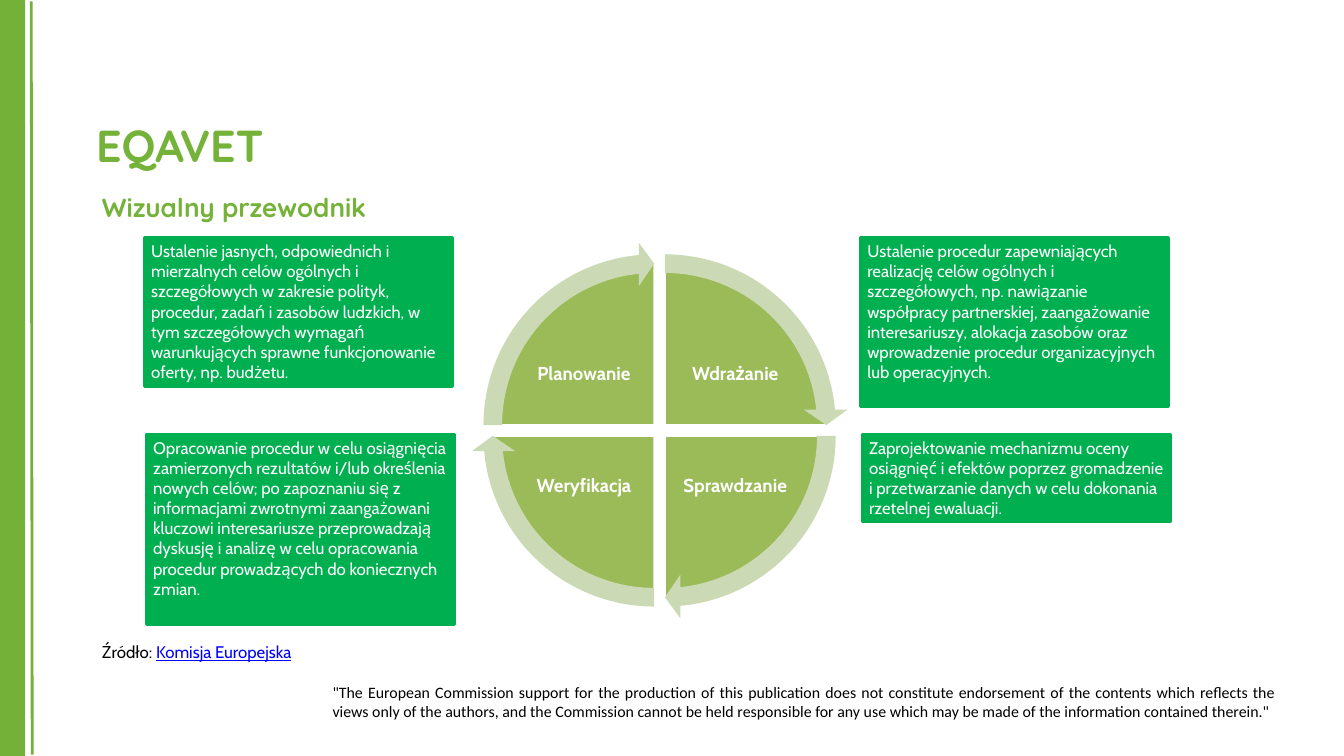
from typing import NamedTuple

from lxml.etree import SubElement
from pptx import Presentation
from pptx.dml.color import RGBColor as Rgb
from pptx.enum.shapes import MSO_CONNECTOR as Link, MSO_SHAPE as Form
from pptx.enum.text import MSO_ANCHOR as Anchor, PP_ALIGN as Align
from pptx.oxml.ns import qn
from pptx.util import Pt

HUES = {
    "side": "74B138",
    "head": "75B239",
    "pie": "9BBB59",
    "arrow": "CBDAB5",
    "box": "00B050",
    "white": "FFFFFF",
    "black": "000000",
    "link": "0000FF",
}
MID_X, MID_Y, GAP = 706.7, 461.2, 5.76  # wheel centre, half the gap
PIE, RING = 349.2, 392.4  # diameters
TURN = 54  # a quarter turn in adjustment units


class Part(NamedTuple):
    """A quarter of the wheel; dx and dy point away from its centre."""
    name: str
    dx: int
    dy: int


class Box(NamedTuple):
    text: str
    left: float
    top: float
    high: float


PARTS = [  # clockwise from the top right
    Part("Wdrażanie", 1, -1),
    Part("Sprawdzanie", 1, 1),
    Part("Weryfikacja", -1, 1),
    Part("Planowanie", -1, -1),
]

BOXES = [
    Box("Opracowanie procedur w celu osiągnięcia zamierzonych rezultatów i/lub "
        "określenia nowych celów; po zapoznaniu się z informacjami zwrotnymi "
        "zaangażowani kluczowi interesariusze przeprowadzają dyskusję i analizę "
        "w celu opracowania procedur prowadzących do koniecznych zmian.",
        157, 465, 203.8),
    Box("Ustalenie jasnych, odpowiednich i mierzalnych celów ogólnych i "
        "szczegółowych w zakresie polityk, procedur, zadań i zasobów ludzkich, "
        "w tym szczegółowych wymagań warunkujących sprawne funkcjonowanie "
        "oferty, np. budżetu.",
        154.8, 254.5, 159.8),
    Box("Zaprojektowanie mechanizmu oceny osiągnięć i efektów poprzez "
        "gromadzenie i przetwarzanie danych w celu dokonania rzetelnej "
        "ewaluacji.",
        924, 465, 94.3),
    Box("Ustalenie procedur zapewniających realizację celów ogólnych i "
        "szczegółowych, np. nawiązanie współpracy partnerskiej, zaangażowanie "
        "interesariuszy, alokacja zasobów oraz wprowadzenie procedur "
        "organizacyjnych lub operacyjnych.",
        922.2, 254.5, 181.4),
]

NOTE = ('"The European Commission support for the production of this publication '
        "does not constitute endorsement of the contents which reflects the views "
        "only of the authors, and the Commission cannot be held responsible for any "
        'use which may be made of the information contained therein."')


def hue(key: str) -> Rgb:
    return Rgb.from_string(HUES[key])


def write(shape, text: str, *, size: float, font: str = "Cabin", color: str = "white",
          bold: bool = False, under: bool = False, align=Align.LEFT,
          anchor=Anchor.TOP, space: float | None = None, inset: float | None = None):
    """Add a run of text to the first paragraph of a shape."""
    frame = shape.text_frame
    frame.word_wrap = True
    frame.vertical_anchor = anchor
    if inset is not None:
        frame.margin_left = frame.margin_right = Pt(inset)
        frame.margin_top = frame.margin_bottom = Pt(inset)
    para = frame.paragraphs[0]
    para.alignment = align
    para.line_spacing = space
    run = para.add_run()
    run.text = text
    face = run.font
    face.name, face.size, face.bold = font, Pt(size), bold
    face.underline = under
    face.color.rgb = hue(color)


def label(slide, left: float, top: float, wide: float, high: float):
    return slide.shapes.add_textbox(Pt(left), Pt(top), Pt(wide), Pt(high))


def solid(slide, form, left: float, top: float, wide: float, high: float,
          fill: str, edge: str | None = None, thick: float = 0):
    """Draw a filled preset shape without a shadow."""
    shape = slide.shapes.add_shape(form, Pt(left), Pt(top), Pt(wide), Pt(high))
    shape.shadow.inherit = False
    shape.fill.solid()
    shape.fill.fore_color.rgb = hue(fill)
    if edge:
        shape.line.color.rgb = hue(edge)
        shape.line.width = Pt(thick)
    else:
        shape.line.fill.background()
    return shape


def disc(slide, form, part: Part, size: float, out: int, fill: str,
         edge: str | None, values: list[float]) -> None:
    """Draw a pie or an arrow, moved by out times the half gap."""
    x = MID_X + out * part.dx * GAP
    y = MID_Y + out * part.dy * GAP
    shape = solid(slide, form, x - size / 2, y - size / 2, size, size, fill, edge, 2)
    for k, value in enumerate(values):
        shape.adjustments[k] = value


def wheel(slide) -> None:
    starts = [(3 + k) % 4 * TURN for k in range(4)]
    for part, start in zip(PARTS, starts):
        disc(slide, Form.PIE, part, PIE, 1, "pie", "white",
             [start, (start + TURN) % (4 * TURN)])
        text = label(slide, MID_X + part.dx * 81 - 64.5,
                     MID_Y + part.dy * 60.5 - 48, 129, 96)
        write(text, part.name, size=20, bold=True, align=Align.CENTER,
              anchor=Anchor.MIDDLE, space=0.9, inset=2)
    for part, start in zip(PARTS, starts):
        disc(slide, Form.CIRCULAR_ARROW, part, RING, 1, "arrow", None,
             [0.05085, 3.275, start + 50.725, start, 0.0593])


def main() -> None:
    deck = Presentation()
    deck.slide_width, deck.slide_height = Pt(1440), Pt(810)
    slide = deck.slides.add_slide(deck.slide_layouts[6])

    # Side band and thin rule
    solid(slide, Form.RECTANGLE, 0, 0, 27, 810, "side")
    rule = slide.shapes.add_connector(Link.STRAIGHT, Pt(34.5), Pt(808.5),
                                      Pt(33.5), Pt(1.5))
    rule.line.color.rgb = hue("side")
    rule.line.width = Pt(3)
    SubElement(rule._element.spPr, qn("a:effectLst"))

    # Disclaimer and headings
    write(label(slide, 349.2, 728, 1024.6, 48), NOTE, size=17, font="Calibri",
          color="black", align=Align.JUSTIFY)
    write(label(slide, 95.8, 123, 1320, 65.5), "EQAVET", size=48,
          font="Quicksand", color="head", bold=True)
    write(label(slide, 102.2, 201, 790, 41), "Wizualny przewodnik", size=28,
          font="Quicksand", color="head", bold=True)

    # Cycle and its descriptions
    wheel(slide)
    for box in BOXES:
        shape = solid(slide, Form.RECTANGLE, box.left, box.top, 329.8, box.high,
                      "box", "box", 3)
        write(shape, box.text, size=18)

    # Source line
    source = label(slide, 102.2, 684, 475, 29)
    write(source, "Źródło: ", size=18, color="black")
    write(source, "Komisja Europejska", size=18, color="link", under=True)

    deck.save("out.pptx")


if __name__ == "__main__":
    main()
